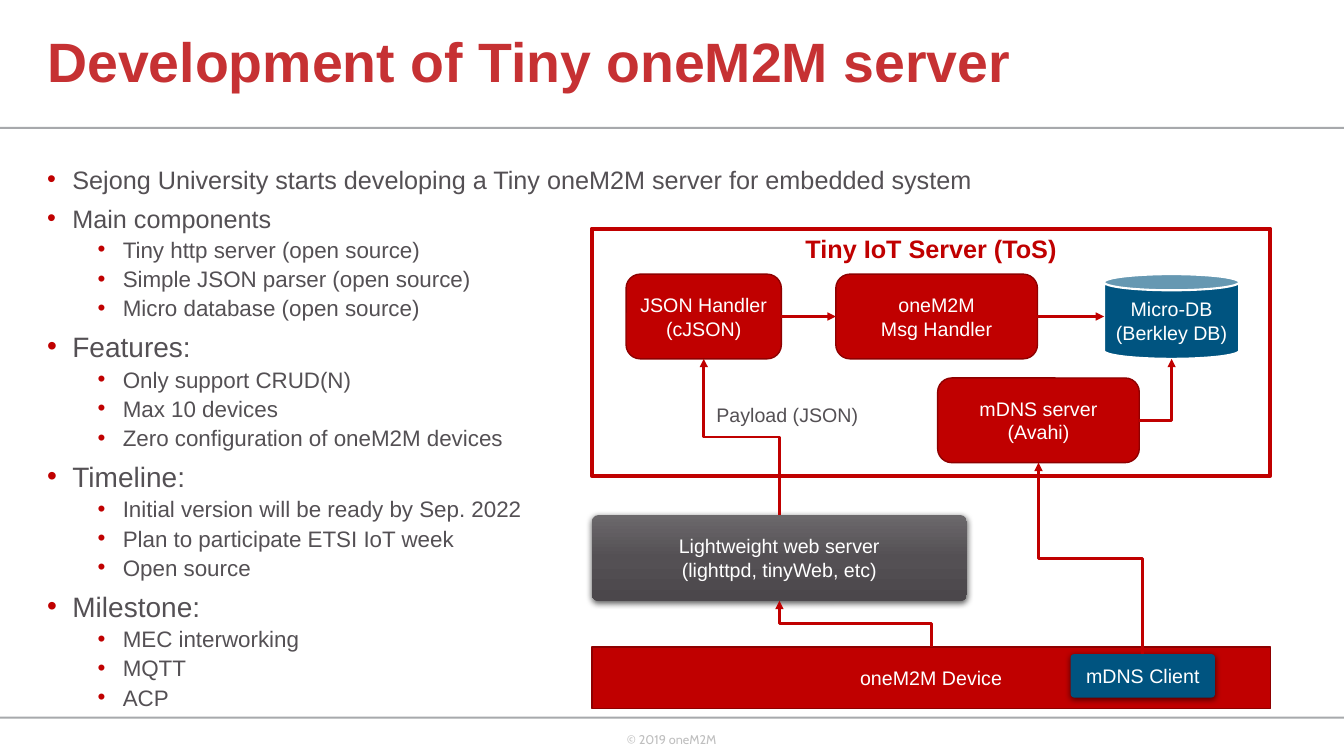
from lxml import etree
from pptx import Presentation
from pptx import util as u
from pptx.dml import color as col
from pptx.enum import shapes, text
from pptx.oxml import ns

PX = 9144
RED, DARK, BLUE, GREY, WHITE = "C00000", "8E0000", "005480", "545054", "FFFFFF"
RULE = "A7A9AC"
RECT = shapes.MSO_SHAPE.RECTANGLE
ROUND = shapes.MSO_SHAPE.ROUNDED_RECTANGLE
MID = text.MSO_ANCHOR.MIDDLE
TOP, BOTTOM, RIGHT, LEFT = 0, 2, 3, 1


def rgb(code):
    return col.RGBColor.from_string(code)


def sub(node, tag, **atts):
    return etree.SubElement(node, ns.qn(tag), **atts)


def write(para, words, size, tint, bold=False, face="Arial"):
    run = para.add_run()
    run.text = words
    font = run.font
    font.size, font.name, font.bold = u.Pt(size), face, bold
    font.color.rgb = rgb(tint)


def label(frame, lines, size=14, tint=WHITE, bold=False):
    frame.word_wrap = True
    for i, words in enumerate(lines):
        para = frame.paragraphs[0] if i == 0 else frame.add_paragraph()
        para.alignment = text.PP_ALIGN.CENTER
        write(para, words, size, tint, bold)


def note(slide, box, wrap=True):
    frame = slide.shapes.add_textbox(*[n * PX for n in box]).text_frame
    frame.word_wrap = wrap
    return frame


def block(slide, kind, box, lines=(), fill=None, line=None, width=1, adj=None):
    shape = slide.shapes.add_shape(kind, *[n * PX for n in box])
    shape.shadow.inherit = False
    if fill:
        shape.fill.solid()
        shape.fill.fore_color.rgb = rgb(fill)
    else:
        shape.fill.background()
    if line:
        shape.line.color.rgb = rgb(line)
        shape.line.width = u.Pt(width)
    else:
        shape.line.fill.background()
    if adj:
        shape.adjustments[0] = adj
    shape.text_frame.vertical_anchor = MID
    label(shape.text_frame, lines)
    return shape


def shade(shape):
    fx = shape._element.spPr.find(ns.qn("a:effectLst"))
    drop = sub(fx, "a:outerShdw", blurRad="57150", dist="19050",
               dir="5400000", algn="ctr", rotWithShape="0")
    sub(sub(drop, "a:srgbClr", val="000000"), "a:alpha", val="63000")


def blend(shape):
    fill = shape.fill
    fill.gradient()
    fill.gradient_angle = 270
    stops = fill._fill._gradFill.find(ns.qn("a:gsLst"))
    for stop in list(stops):
        stops.remove(stop)
    for pos, tint in ((0, "6B686B"), (50000, GREY), (100000, "4B474B")):
        sub(sub(stops, "a:gs", pos=str(pos)), "a:srgbClr", val=tint)


def side(shape, site):
    x, y, w, h = shape.left, shape.top, shape.width, shape.height
    return {TOP: (x + w // 2, y), LEFT: (x, y + h // 2),
            BOTTOM: (x + w // 2, y + h), RIGHT: (x + w, y + h // 2)}[site]


def arrow(slide, start, out, end, into, kind="STRAIGHT", glue=True):
    a, b = side(start, out), side(end, into)
    link = slide.shapes.add_connector(
        getattr(shapes.MSO_CONNECTOR, kind), *a, *b)
    link.begin_connect(start, out)
    if glue:
        link.end_connect(end, into)
    link.line.color.rgb = rgb(RED)
    link.line.width = u.Pt(2)
    sub(link.line._get_or_add_ln(), "a:tailEnd", type="triangle")
    sub(link._element.spPr, "a:effectLst")
    return link


def rise(slide, start, end):
    link = arrow(slide, start, TOP, end, BOTTOM, "ELBOW")
    (ax, ay), (bx, by) = side(start, TOP), side(end, BOTTOM)
    w, h = ay - by, ax - bx
    link.left, link.top = (ax + bx - w) // 2, (ay + by - h) // 2
    link.width, link.height = w, h
    form = link._element.spPr.find(ns.qn("a:xfrm"))
    for key, val in (("rot", "16200000"), ("flipH", "0"), ("flipV", "1")):
        form.set(key, val)


def header(slide, box):
    x, y, w, h = box
    block(slide, RECT, (x, y + h - 2, w, 2), fill=RULE)
    frame = note(slide, (x + 37, y, 1063, h))
    frame.vertical_anchor = MID
    para = frame.paragraphs[0]
    para.line_spacing = 0.9
    write(para, "Development of Tiny oneM2M server", 39.6, "C63133", True)


def footer(slide, box):
    x, y, w, h = box
    block(slide, RECT, (x, y, w, 2), fill=RULE)
    frame = note(slide, (x + 612, y + 10, 110, 29), False)
    write(frame.paragraphs[0], "© 2019 oneM2M", 9, "BFBFBF", face="Cabin")


def bullet(para, words, size, deep):
    props = para._p.get_or_add_pPr()
    props.set("marL", str((75 if deep else 25) * PX))
    props.set("indent", str(-25 * PX))
    props.set("lvl", str(int(deep)))
    sub(sub(props, "a:buClr"), "a:srgbClr", val=RED)
    sub(props, "a:buFont", typeface="Arial")
    sub(props, "a:buChar", char="•")
    para.line_spacing = 0.83
    write(para, words, size, GREY)


def points(slide, box, groups):
    frame = note(slide, box)
    rows = []
    for head, size, items in groups:
        rows.append((head, size, False))
        rows += [(item, 16, True) for item in items]
    for i, (words, size, deep) in enumerate(rows):
        para = frame.add_paragraph() if i else frame.paragraphs[0]
        if i:
            para.space_before = u.Pt(5 if deep else 10)
        bullet(para, words, size, deep)


def diagram(slide, box):
    x, y, w, h = box

    def part(kind, dx, dy, pw, ph, lines, fill=RED, line=DARK, **opts):
        return block(slide, kind, (x + dx, y + dy, pw, ph),
                     lines, fill, line, **opts)

    row, tall = 45, 84
    device = part(RECT, 0, h - 61, w, 61, ["oneM2M Device"])
    web = part(ROUND, 0, 284, 372, 85,
               ["Lightweight web server", "(lighttpd, tinyWeb, etc)"],
               GREY, None, adj=0.076)
    blend(web)
    shade(web)
    label(note(slide, (x + 71, y + 168, 246, 34)), ["Payload (JSON)"], tint=GREY)
    json = part(ROUND, 34, row, 154, tall, ["JSON Handler", "(cJSON)"])
    msg = part(ROUND, 242, row, 200, tall, ["oneM2M", "Msg Handler"])
    frame = part(RECT, 0, 0, w, 245, [], None, RED, width=3).text_frame
    frame.vertical_anchor = text.MSO_ANCHOR.TOP
    label(frame, ["Tiny IoT Server (ToS)"], 18, RED, True)
    store = part(shapes.MSO_SHAPE.CAN, 508, row, 134, tall,
                 ["Micro-DB", "(Berkley DB)"], BLUE, WHITE,
                 width=1.5, adj=0.191)
    client = part(ROUND, 475, 422, 143, 43, ["mDNS Client"],
                  BLUE, None, adj=0.076)
    shade(client)
    mdns = part(ROUND, 343, 148, 200, tall, ["mDNS server", "(Avahi)"])

    arrow(slide, json, RIGHT, msg, LEFT)
    arrow(slide, msg, RIGHT, store, LEFT, glue=False)
    bend = arrow(slide, mdns, RIGHT, store, BOTTOM, "ELBOW", False)
    bend._element.spPr.find(ns.qn("a:prstGeom")).set("prst", "bentConnector2")
    for start, end in ((web, json), (device, web), (client, mdns)):
        rise(slide, start, end)


GROUPS = [
    ("Sejong University starts developing a Tiny oneM2M server for embedded system",
     18, []),
    ("Main components", 18,
     ["Tiny http server (open source)", "Simple JSON parser (open source)",
      "Micro database (open source)"]),
    ("Features:", 20,
     ["Only support CRUD(N)", "Max 10 devices",
      "Zero configuration of oneM2M devices"]),
    ("Timeline:", 20,
     ["Initial version will be ready by Sep. 2022",
      "Plan to participate ETSI IoT week", "Open source"]),
    ("Milestone:", 20, ["MEC interworking", "MQTT", "ACP"]),
]


def main():
    deck = Presentation()
    deck.slide_width, deck.slide_height = 1333 * PX, 750 * PX
    slide = deck.slides.add_slide(deck.slide_layouts[6])
    header(slide, (0, 0, 1333, 128))
    footer(slide, (0, 711, 1333, 39))
    points(slide, (37, 163, 1280, 540), GROUPS)
    diagram(slide, (587, 227, 673, 476))
    deck.save("out.pptx")


if __name__ == "__main__":
    main()
